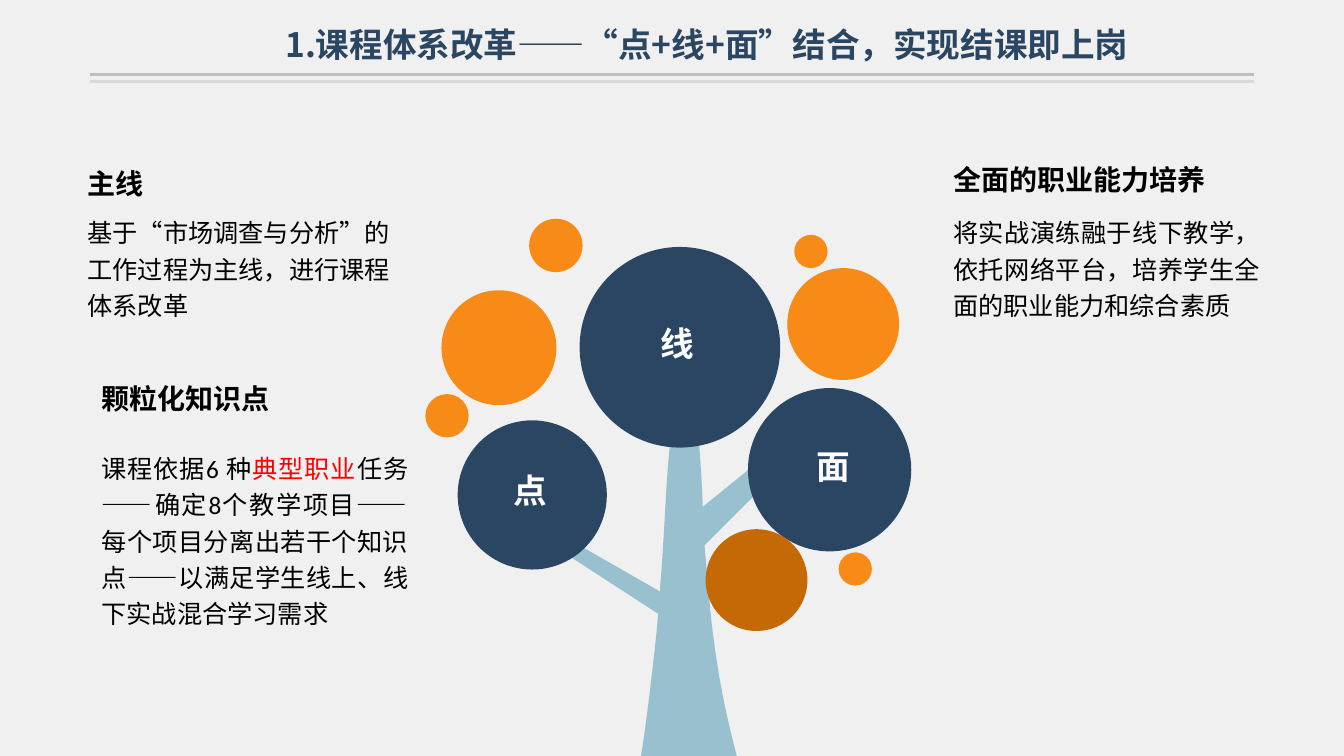
import pptx
import pptx.dml.color
import pptx.enum.shapes
import pptx.enum.text
import pptx.oxml.ns
import pptx.util
import lxml.etree

ALIGN = pptx.enum.text.PP_ALIGN
ANCHOR = pptx.enum.text.MSO_ANCHOR
NAVY, ORANGE, BROWN, TRUNK = "2B4663", "F88B17", "C56906", "99C0CE"
BLACK, WHITE, RED = "000000", "FFFFFF", "FF0000"
CJK = "Noto Sans CJK SC"


def colour(hex_value):
    """Turn a hex string into a colour."""
    return pptx.dml.color.RGBColor.from_string(hex_value)


def cells(count):
    """Turn a number of grid cells, ten to the inch, into a length."""
    return pptx.util.Inches(count / 10)


def bezier(start, first, second, end, steps=12):
    """List the points of a cubic curve after its start."""
    curve = []
    for step in range(1, steps + 1):
        t = step / steps
        weights = ((1 - t) ** 3, 3 * t * (1 - t) ** 2, 3 * t * t * (1 - t), t ** 3)
        curve.append(tuple(
            sum(w * point[axis] for w, point in zip(weights, (start, first, second, end)))
            for axis in (0, 1)))
    return curve


class TreeSlide:
    """Draw elements on one slide, placed in grid cells."""

    def __init__(self, deck, background):
        """Add a blank slide with a plain background."""
        self.slide = deck.slides.add_slide(deck.slide_layouts[6])
        self.shapes = self.slide.shapes
        fill = self.slide.background.fill
        fill.solid()
        fill.fore_color.rgb = colour(background)

    def paint(self, shape, fill):
        """Give a shape a flat fill without outline or shadow."""
        shape.shadow.inherit = False
        shape.fill.solid()
        shape.fill.fore_color.rgb = colour(fill)
        shape.line.fill.background()

    def circle(self, left, top, size, fill):
        """Draw a filled circle."""
        self.paint(self.shapes.add_shape(
            pptx.enum.shapes.MSO_SHAPE.OVAL,
            cells(left), cells(top), cells(size), cells(size)), fill)

    def outline(self, points, fill):
        """Draw a closed filled outline."""
        corners = [(cells(x), cells(y)) for x, y in points]
        builder = self.shapes.build_freeform(*corners[0])
        builder.add_line_segments(corners[1:], close=True)
        self.paint(builder.convert_to_shape(), fill)

    def rule(self, left, right, row, line_colour):
        """Draw a horizontal rule."""
        rule = self.shapes.add_connector(
            pptx.enum.shapes.MSO_CONNECTOR.STRAIGHT,
            cells(left), cells(row), cells(right), cells(row))
        rule.line.color.rgb = colour(line_colour)
        rule.line.width = pptx.util.Pt(2.25)
        lxml.etree.SubElement(rule._element.spPr, pptx.oxml.ns.qn("a:effectLst"))

    def text(self, box, runs, size, font, ink=BLACK, bold=False, spacing=None,
             align=ALIGN.LEFT, anchor=ANCHOR.TOP, insets=(1, 0.5)):
        """Write one paragraph made of (words, font, colour) runs."""
        frame = self.shapes.add_textbox(*map(cells, box)).text_frame
        frame.word_wrap = True
        frame.vertical_anchor = anchor
        frame.margin_left = frame.margin_right = cells(insets[0])
        frame.margin_top = frame.margin_bottom = cells(insets[1])
        paragraph = frame.paragraphs[0]
        paragraph.alignment = align
        paragraph.line_spacing = spacing
        paragraph.font.size = pptx.util.Pt(size)
        paragraph.font.bold = bold
        for words, run_font, run_ink in runs:
            run = paragraph.add_run()
            run.text = words
            run.font.size = pptx.util.Pt(size)
            run.font.bold = bold
            run.font.name = run_font or font
            run.font.color.rgb = colour(run_ink or ink)
            east_asian = lxml.etree.SubElement(
                run.font._element, pptx.oxml.ns.qn("a:ea"))
            east_asian.set("typeface", CJK)
        return frame

    def title(self, box, runs):
        """Write the slide title."""
        frame = self.text(box, runs, 24, CJK, NAVY, True, insets=(1.3, 0.7))
        frame.auto_size = pptx.enum.text.MSO_AUTO_SIZE.SHAPE_TO_FIT_TEXT

    def label(self, box, words):
        """Write a white word on a circle."""
        self.text(box, [(words, None, None)], 24, "Arial", WHITE, True, 0.9,
                  ALIGN.CENTER, ANCHOR.MIDDLE)

    def heading(self, box, words, font=CJK):
        """Write the heading of a text block."""
        self.text(box, [(words, None, None)], 20, font, BLACK, True, 0.9,
                  anchor=ANCHOR.MIDDLE)

    def body(self, box, runs, align=ALIGN.JUSTIFY):
        """Write the body of a text block."""
        self.text(box, runs, 18, "Calibri", spacing=1.2, align=align)


def main():
    """Build the slide and save it."""
    deck = pptx.Presentation()
    deck.slide_width, deck.slide_height = cells(133.33), cells(75)
    page = TreeSlide(deck, "F0F0F0")

    for row, grey in ((7.4, "BFBFBF"), (8.1, "D9D9D9")):
        page.rule(8.9, 124.4, row, grey)
    page.title((27, 1.7, 96, 5.4), [
        ("1.课程体系改革", None, None),
        ("——", "TeX Gyre Adventor", None),
        ("“点+线+面”结合，实现结课即上岗", None, None)])

    page.outline(
        [(69.2, 41.7)]
        + bezier((69.2, 41.7), (69.4, 44.5), (69.6, 47.1), (69.7, 49.7))
        + [(69.7, 50.3), (74.5, 46.4), (76.2, 47.8), (69.9, 54.1), (70.2, 57.5)]
        + bezier((70.2, 57.5), (70.6, 62.7), (71.3, 68.3), (73.1, 75))
        + [(63.6, 75)]
        + bezier((63.6, 75), (64.3, 70.5), (64.7, 66.6), (65.1, 63.1))
        + [(65.3, 60.9), (55.9, 54.8), (56.6, 53.6), (65.5, 58.7), (65.5, 58.2)]
        + bezier((65.5, 58.2), (66.1, 50.5), (66.1, 45.4), (66.8, 42)), TRUNK)

    for left, top, size, fill in (
            (57.5, 24.5, 19.9, NAVY), (74.2, 38.5, 16.2, NAVY),
            (70, 52.5, 10.1, BROWN), (78.1, 26.6, 11.1, ORANGE),
            (45.4, 41.7, 14.8, NAVY), (83.2, 54.8, 3.3, ORANGE),
            (43.8, 28.8, 11.4, ORANGE), (52.5, 21.7, 5.3, ORANGE),
            (42.2, 39.1, 4.3, ORANGE), (78.8, 23.3, 3.3, ORANGE)):
        page.circle(left, top, size, fill)

    page.label((60.9, 32.4, 12.6, 3.8), "线")
    page.label((47.7, 47, 9.8, 3.8), "点")
    page.label((77.7, 44.4, 9.9, 4.2), "面")

    page.heading((9.1, 37.6, 26.6, 4.3), "颗粒化知识点")
    page.heading((7.7, 16.2, 26.6, 4.3), "主线")
    page.heading((93.6, 15.4, 32.3, 5.1), "全面的职业能力培养", "Arial")

    page.body((93.6, 20.5, 32.4, 15.1), [
        ("将实战演练融于线下教学，依托网络平台，培养学生全面的职业能力和综合素质", None, None)])
    page.body((7.7, 20.5, 32.4, 15.1), [
        ("基于“市场调查与分析”的工作过程为主线，进行课程体系改革", None, None)], ALIGN.LEFT)
    dash = ("——", "Roboto", None)
    page.body((9.1, 43.9, 32.4, 21.1), [
        ("课程依据6 种", None, None), ("典型职业", None, RED), ("任务", None, None), dash,
        ("确定8个教学项目", None, None), dash,
        ("每个项目分离出若干个知识点", None, None), dash,
        ("以满足学生线上、线下实战混合学习需求", None, None)])

    deck.save("out.pptx")


if __name__ == "__main__":
    main()
